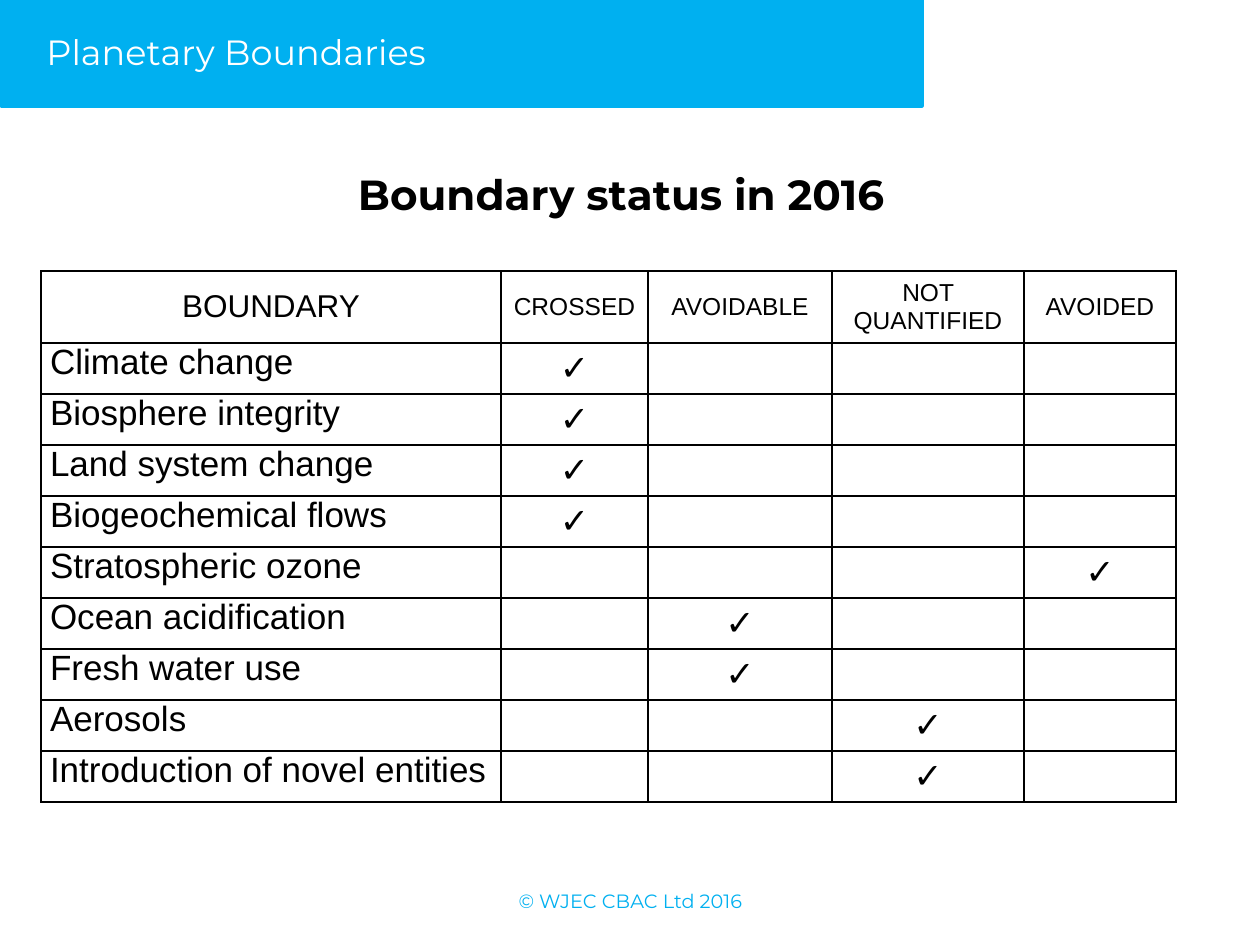
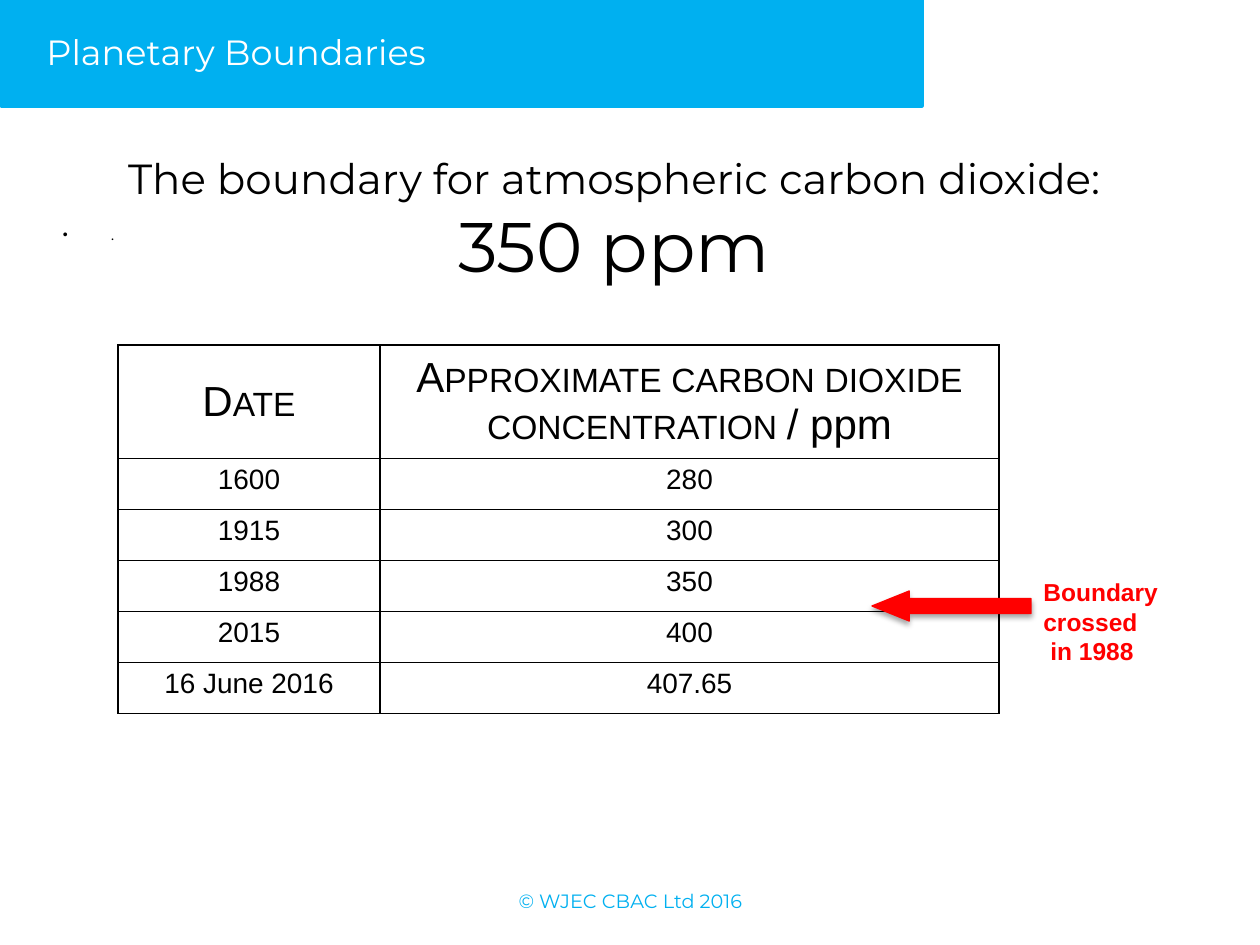
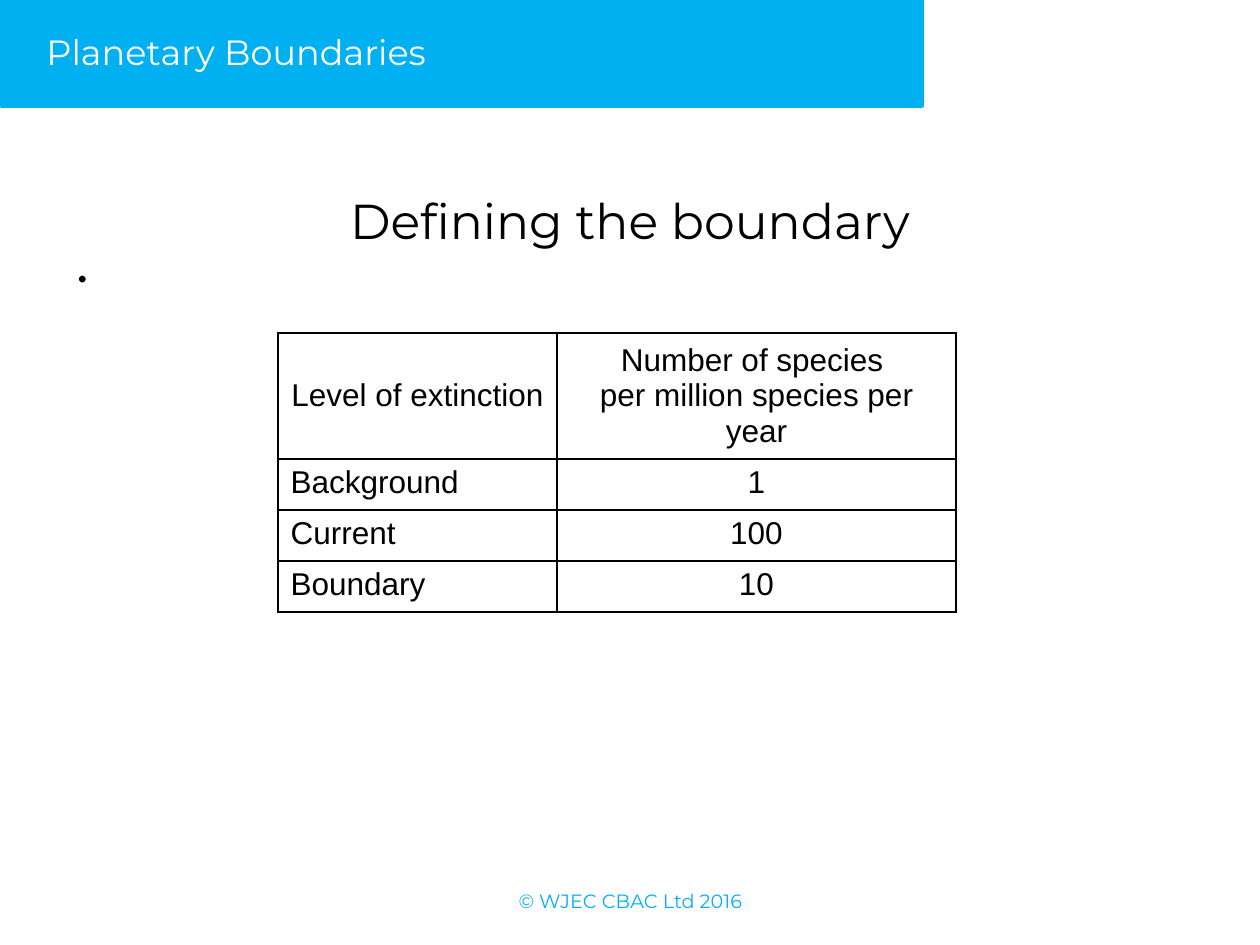
from lxml import etree
from pptx import Presentation
from pptx.dml.color import RGBColor
from pptx.enum.shapes import MSO_SHAPE
from pptx.enum.text import MSO_ANCHOR, PP_ALIGN
from pptx.oxml.ns import qn
from pptx.util import Pt

LEFT, CENTER = PP_ALIGN.LEFT, PP_ALIGN.CENTER
TOP, MIDDLE = MSO_ANCHOR.TOP, MSO_ANCHOR.MIDDLE
RECT, LEFT_ARROW = MSO_SHAPE.RECTANGLE, MSO_SHAPE.LEFT_ARROW

BLUE, WHITE, BLACK, RED = "00B0F0", "FFFFFF", "000000", "FF0000"
HEAD_FONT, TABLE_FONT, BODY_FONT, TICK_FONT = "Montserrat", "Arial", "Calibri", "Noto Sans"
TICK = "✓"
ROW_H = 51

BAND_TITLE = "Planetary Boundaries"
FOOTER = "© WJEC CBAC Ltd 2016"

STATUS_TITLE = "Boundary status in 2016"
STATUS_HEADER = ["BOUNDARY", "CROSSED", "AVOIDABLE", "NOT QUANTIFIED", "AVOIDED"]
STATUS = [
    ("Climate change", "CROSSED"),
    ("Biosphere integrity", "CROSSED"),
    ("Land system change", "CROSSED"),
    ("Biogeochemical flows", "CROSSED"),
    ("Stratospheric ozone", "AVOIDED"),
    ("Ocean acidification", "AVOIDABLE"),
    ("Fresh water use", "AVOIDABLE"),
    ("Aerosols", "NOT QUANTIFIED"),
    ("Introduction of novel entities", "NOT QUANTIFIED"),
]

CO2_TITLE = "The boundary for atmospheric carbon dioxide: "
CO2_LIMIT = "350 ppm"
CO2_UNIT = "/ ppm"
CO2_ROWS = [
    ("Date", "Approximate carbon dioxide concentration "),
    ("1600", "280"),
    ("1915", "300"),
    ("1988", "350"),
    ("2015", "400"),
    ("16 June 2016", "407.65"),
]
CO2_NOTE = "Boundary crossed\nin 1988"

EXTINCTION_TITLE = "Defining the boundary"
EXTINCTION_ROWS = [
    ("Level of extinction", "Number of species \nper million species per year"),
    ("Background", "1"),
    ("Current", "100"),
    ("Boundary", "10"),
]


def px(n):
    return round(n * 914400 / 126)


def rgb(color):
    return RGBColor.from_string(color)


def style_run(r, size, font, color=BLACK, bold=False):
    r.font.size = Pt(size)
    r.font.name = font
    r.font.color.rgb = rgb(color)
    r.font.bold = bold


def write(tf, text, size, font, color=BLACK, bold=False, align=LEFT):
    tf.text = text
    for p in tf.paragraphs:
        p.alignment = align
        for r in p.runs:
            style_run(r, size, font, color, bold)


def add_text(slide, box, text, size, font, color=BLACK, bold=False, align=LEFT, anchor=TOP):
    tf = slide.shapes.add_textbox(*map(px, box)).text_frame
    tf.word_wrap = True
    tf.vertical_anchor = anchor
    write(tf, text, size, font, color, bold, align)
    return tf


def add_block(slide, kind, box, color, line_width):
    sp = slide.shapes.add_shape(kind, *map(px, box))
    sp.shadow.inherit = False
    sp.fill.solid()
    sp.fill.fore_color.rgb = rgb(color)
    sp.line.color.rgb = rgb(color)
    sp.line.width = Pt(line_width)
    return sp


def add_shadow(sp):
    effects = sp._element.spPr.find(qn("a:effectLst"))
    shadow = etree.SubElement(effects, qn("a:outerShdw"), blurRad=str(Pt(3.1)),
                              dist=str(Pt(1.8)), dir="5400000", rotWithShape="0")
    color = etree.SubElement(shadow, qn("a:srgbClr"), val=BLACK)
    etree.SubElement(color, qn("a:alpha"), val="35000")


def add_borders(cell):
    tcPr = cell._tc.get_or_add_tcPr()
    for side in ("a:lnL", "a:lnR", "a:lnT", "a:lnB"):
        ln = etree.SubElement(tcPr, qn(side), w=str(Pt(1)))
        fill = etree.SubElement(ln, qn("a:solidFill"))
        etree.SubElement(fill, qn("a:srgbClr"), val=BLACK)


def add_table(slide, x, y, widths, header_h, rows, header_sizes, size, first_align, insets=None):
    heights = [header_h] + [ROW_H] * (len(rows) - 1)
    box = (x, y, sum(widths), sum(heights))
    table = slide.shapes.add_table(len(rows), len(widths), *map(px, box)).table
    table.first_row = table.horz_banding = False
    for column, width in zip(table.columns, widths):
        column.width = px(width)
    for i, (values, height) in enumerate(zip(rows, heights)):
        table.rows[i].height = px(height)
        for j, text in enumerate(values):
            cell = table.cell(i, j)
            add_borders(cell)
            cell.fill.background()
            cell.vertical_anchor = TOP if i else MIDDLE
            if insets:
                cell.margin_left = cell.margin_right = px(insets[0])
                cell.margin_top = cell.margin_bottom = px(insets[1])
            write(cell.text_frame, text, size if i else header_sizes[j],
                  TICK_FONT if text == TICK else TABLE_FONT,
                  align=first_align if i and j == 0 else CENTER)
    return table


def add_slide(prs):
    slide = prs.slides.add_slide(prs.slide_layouts[6])
    add_block(slide, RECT, (1, 0, 921, 106), BLUE, 2)
    add_text(slide, (34, 24, 1042, 72), BAND_TITLE, 20, HEAD_FONT, WHITE)
    add_text(slide, (431, 876, 399, 50), FOOTER, 11, HEAD_FONT, BLUE, align=CENTER, anchor=MIDDLE)
    return slide


def build_status(prs):
    slide = add_slide(prs)
    add_text(slide, (54, 147, 1134, 93), STATUS_TITLE, 24, HEAD_FONT,
             bold=True, align=CENTER, anchor=MIDDLE)
    rows = [STATUS_HEADER]
    for name, status in STATUS:
        rows.append([name] + [TICK if status == head else "" for head in STATUS_HEADER[1:]])
    add_table(slide, 41, 271, [460, 147, 184, 192, 152], 72, rows,
              [18, 14, 14, 14, 14], 20, LEFT, (9, 0))


def build_co2(prs):
    slide = add_slide(prs)
    tf = add_text(slide, (63, 220, 100, 27), ".", 8, BODY_FONT)
    tf.margin_left = tf.margin_right = 0
    pPr = tf.paragraphs[0]._p.get_or_add_pPr()
    pPr.set("marL", str(px(48)))
    pPr.set("indent", str(px(-48)))
    etree.SubElement(pPr, qn("a:buFont"), typeface=TABLE_FONT)
    etree.SubElement(pPr, qn("a:buChar"), char="•")

    table = add_table(slide, 118, 345, [262, 619], 106, CO2_ROWS, [24, 24], 16, CENTER)
    for cell in table.rows[0].cells:
        cell.text_frame.paragraphs[0].runs[0].font._element.set("cap", "small")
    r = table.cell(0, 1).text_frame.paragraphs[0].add_run()
    r.text = CO2_UNIT
    style_run(r, 24, TABLE_FONT)

    tf = add_text(slide, (69, 146, 1090, 149), CO2_TITLE, 24, HEAD_FONT, align=CENTER)
    r = tf.paragraphs[0].add_run()
    r.text = CO2_LIMIT
    style_run(r, 40, HEAD_FONT)

    arrow = add_block(slide, LEFT_ARROW, (872, 591, 159, 30), RED, 0.75)
    arrow.adjustments[0] = 0.5
    arrow.adjustments[1] = 1.24
    add_shadow(arrow)
    tf = add_text(slide, (1031, 571, 212, 102), CO2_NOTE, 14, TABLE_FONT, RED, True)
    tf.paragraphs[1]._p.get_or_add_pPr().set("marL", str(px(7)))


def build_extinction(prs):
    slide = add_slide(prs)
    add_text(slide, (63, 166, 1134, 108), EXTINCTION_TITLE, 28, HEAD_FONT,
             align=CENTER, anchor=MIDDLE)
    add_table(slide, 278, 333, [279, 399], 118, EXTINCTION_ROWS, [18, 18], 18, LEFT)
    add_text(slide, (63, 220, 1134, 624), ".", 32, BODY_FONT)


def main():
    prs = Presentation()
    prs.slide_width, prs.slide_height = px(1260), px(945)
    build_status(prs)
    build_co2(prs)
    build_extinction(prs)
    prs.save("out.pptx")


if __name__ == "__main__":
    main()
